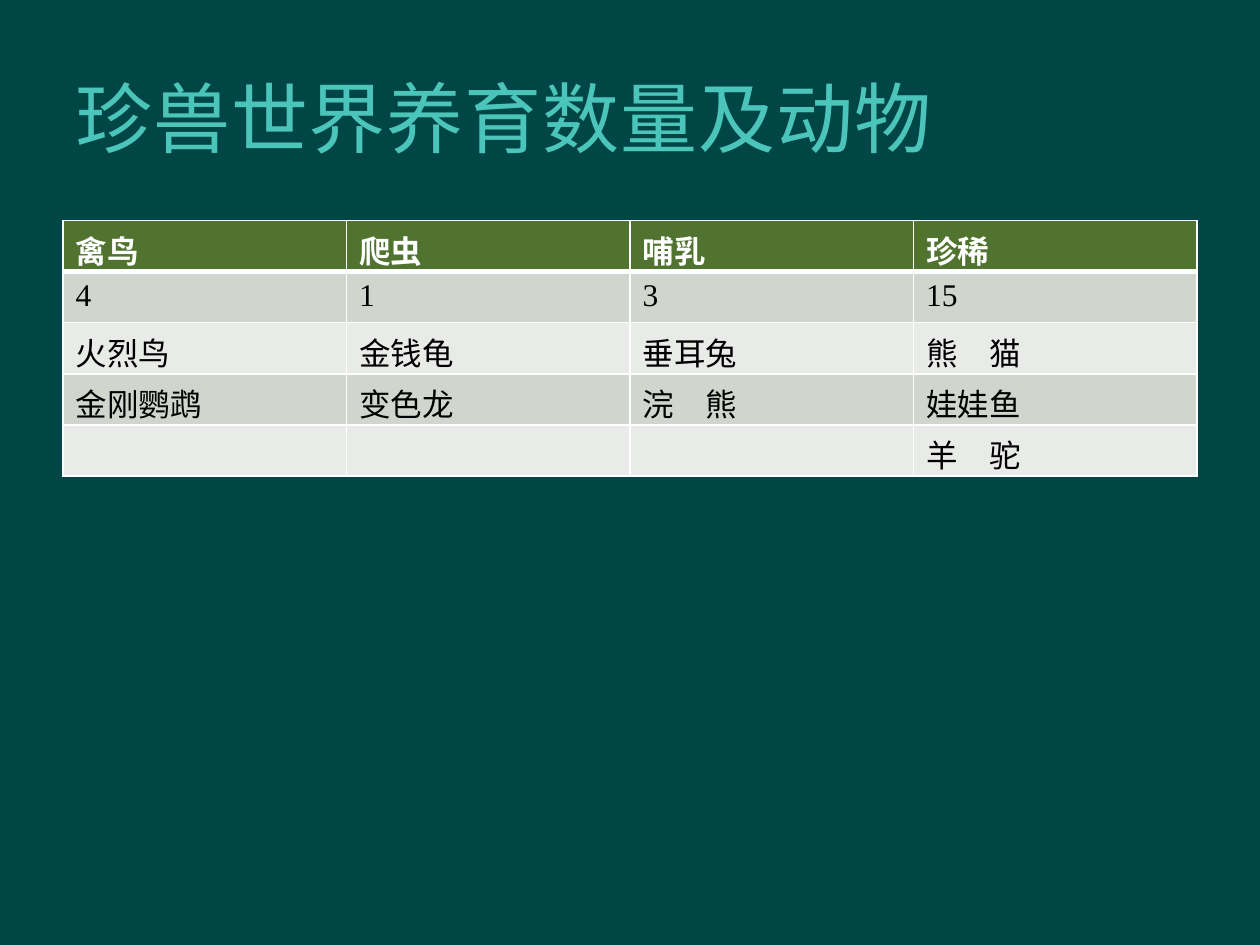
from lxml import etree
from pptx import Presentation
from pptx.dml.color import RGBColor
from pptx.enum.text import MSO_ANCHOR
from pptx.oxml.ns import qn
from pptx.util import Pt

MIDDLE = MSO_ANCHOR.MIDDLE
TEAL = RGBColor(0x00, 0x46, 0x46)
AQUA = RGBColor(0x4B, 0xC5, 0xB9)
GREEN = RGBColor(0x50, 0x74, 0x2F)
BANDS = (RGBColor(0xE9, 0xEB, 0xE8), RGBColor(0xD0, 0xD6, 0xCD))
WHITE = RGBColor(0xFF, 0xFF, 0xFF)
BLACK = RGBColor(0x00, 0x00, 0x00)

TITLE = "珍兽世界养育数量及动物"
ROWS = [
    ("禽鸟", "爬虫", "哺乳", "珍稀"),
    ("4", "1", "3", "15"),
    ("火烈鸟", "金钱龟", "垂耳兔", "熊　猫"),
    ("金刚鹦鹉", "变色龙", "浣　熊", "娃娃鱼"),
    ("", "", "", "羊　驼"),
]
LEFT, TOP = 36, 126
COL, ROW = 162, 29.2


def style(font, name, size, color, bold=False):
    font.name, font.size, font.bold = name, Pt(size), bold
    font.color.rgb = color


def add_edge(cell, side, width):
    """Draw one white border; call in the order L, R, T, B."""
    line = etree.SubElement(cell._tc.get_or_add_tcPr(), qn("a:ln" + side),
                            w=str(Pt(width)))
    fill = etree.SubElement(line, qn("a:solidFill"))
    etree.SubElement(fill, qn("a:srgbClr"), val=str(WHITE))


def add_title(slide):
    box = slide.shapes.add_textbox(Pt(LEFT), Pt(21.6), Pt(612), Pt(90))
    frame = box.text_frame
    frame.word_wrap = True
    frame.vertical_anchor = MIDDLE
    frame.text = TITLE
    run = frame.paragraphs[0].runs[0]
    style(run.font, "Arial", 44, AQUA)
    run._r.get_or_add_rPr().set("spc", "50")


def add_grid(slide):
    count, cols = len(ROWS), len(ROWS[0])
    table = slide.shapes.add_table(count, cols, Pt(LEFT), Pt(TOP),
                                   Pt(COL * cols), Pt(ROW * count)).table
    for r, row in enumerate(ROWS):
        head = r == 0
        for c, text in enumerate(row):
            cell = table.cell(r, c)
            widths = {"L": 1, "R": 1, "T": 3 if r == 1 else 1, "B": 3 if head else 1}
            for side, width in widths.items():
                add_edge(cell, side, width)
            cell.fill.solid()
            cell.fill.fore_color.rgb = GREEN if head else BANDS[r % 2]
            cell.text_frame.text = text
            for run in cell.text_frame.paragraphs[0].runs:
                style(run.font, "Times New Roman", 18, WHITE if head else BLACK, head)


def main():
    deck = Presentation()
    deck.slide_width, deck.slide_height = Pt(720), Pt(540)
    slide = deck.slides.add_slide(deck.slide_layouts[6])
    slide.background.fill.solid()
    slide.background.fill.fore_color.rgb = TEAL
    add_title(slide)
    add_grid(slide)
    deck.save("out.pptx")


if __name__ == "__main__":
    main()
